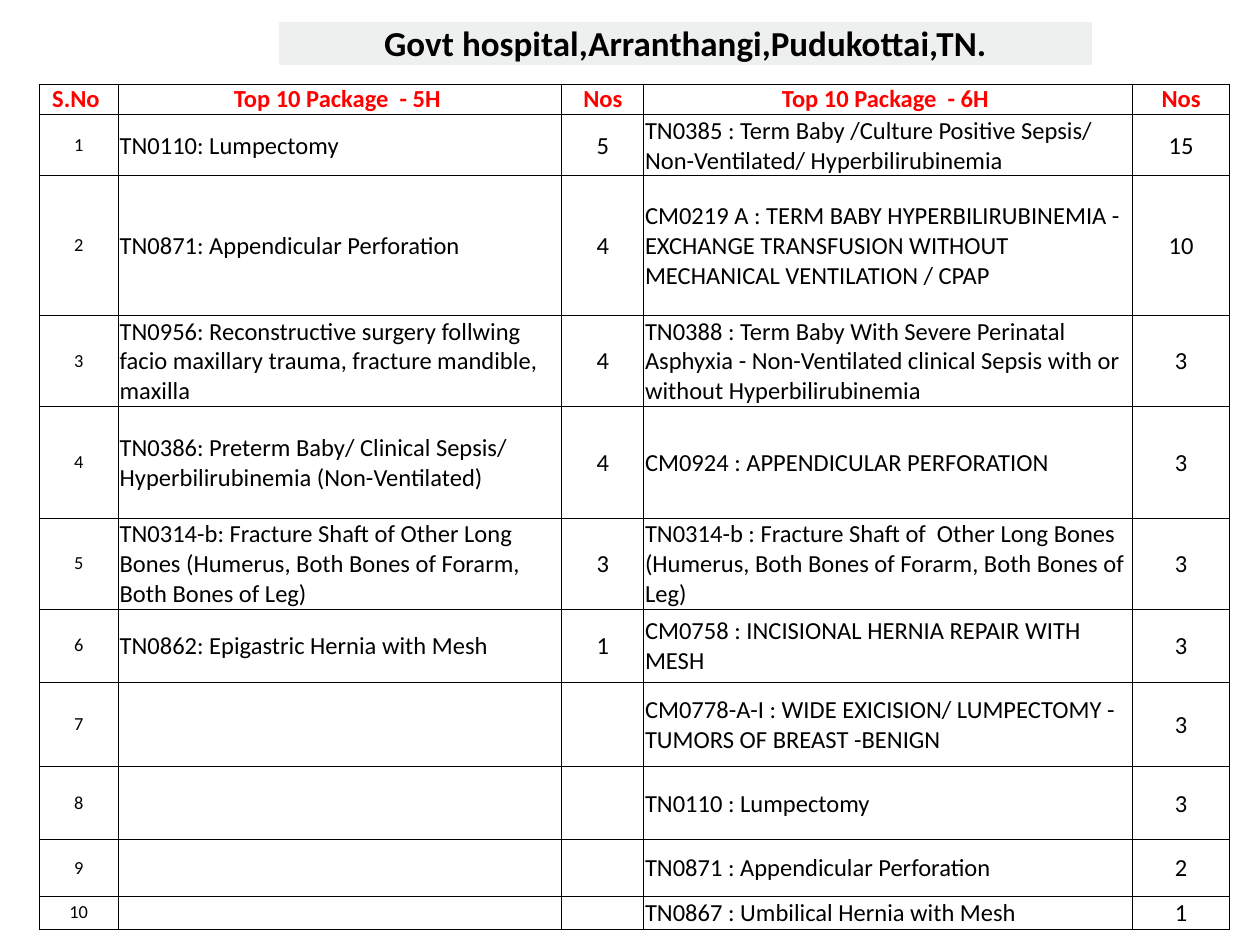
from dataclasses import dataclass

from lxml.etree import SubElement
from pptx import Presentation
from pptx.dml.color import RGBColor
from pptx.enum.text import MSO_ANCHOR, PP_ALIGN
from pptx.oxml.ns import qn
from pptx.util import Inches, Pt


@dataclass(frozen=True)
class Theme:
    font: str = "Calibri"
    ink: str = "000000"
    heading: str = "FF0000"
    paper: str = "FFFFFF"
    title_fill: str = "EEF0EF"
    title_size: float = 20
    body_size: float = 14
    serial_size: float = 10.5


THEME = Theme()

COLUMN_WIDTHS = [0.63, 3.52, 0.65, 3.88, 0.77]
ROW_HEIGHTS = [0.24, 0.47, 1.11, 0.7, 0.89, 0.7, 0.58, 0.67, 0.58, 0.45, 0.26]
HEADINGS = ["S.No ", "Top 10 Package  - 5H ", "Nos", "Top 10 Package  - 6H ", "Nos"]
PACKAGES_5H = [
    ("TN0110: Lumpectomy", 5),
    ("TN0871: Appendicular Perforation", 4),
    ("TN0956: Reconstructive surgery follwing facio maxillary trauma, "
     "fracture mandible, maxilla", 4),
    ("TN0386: Preterm Baby/ Clinical Sepsis/ Hyperbilirubinemia (Non-Ventilated)", 4),
    ("TN0314-b: Fracture Shaft of Other Long Bones "
     "(Humerus, Both Bones of Forarm, Both Bones of Leg)", 3),
    ("TN0862: Epigastric Hernia with Mesh", 1),
]
PACKAGES_6H = [
    ("TN0385 : Term Baby /Culture Positive Sepsis/ "
     "Non-Ventilated/ Hyperbilirubinemia", 15),
    ("CM0219 A : TERM BABY HYPERBILIRUBINEMIA - EXCHANGE TRANSFUSION "
     "WITHOUT MECHANICAL VENTILATION / CPAP", 10),
    ("TN0388 : Term Baby With Severe Perinatal Asphyxia - Non-Ventilated "
     "clinical Sepsis with or without Hyperbilirubinemia", 3),
    ("CM0924 : APPENDICULAR PERFORATION", 3),
    ("TN0314-b : Fracture Shaft of  Other Long Bones "
     "(Humerus, Both Bones of Forarm, Both Bones of Leg)", 3),
    ("CM0758 : INCISIONAL HERNIA REPAIR WITH MESH", 3),
    ("CM0778-A-I : WIDE EXICISION/ LUMPECTOMY - TUMORS OF BREAST -BENIGN", 3),
    ("TN0110 : Lumpectomy", 3),
    ("TN0871 : Appendicular Perforation", 2),
    ("TN0867 : Umbilical Hernia with Mesh", 1),
]


def write_text(cell, text, size=THEME.body_size, color=THEME.ink, bold=False,
               align=PP_ALIGN.CENTER, anchor=MSO_ANCHOR.MIDDLE, inset=0.01):
    cell.margin_left = cell.margin_right = cell.margin_top = Inches(inset)
    cell.margin_bottom = 0
    cell.vertical_anchor = anchor
    paragraph = cell.text_frame.paragraphs[0]
    paragraph.alignment = align
    if not text:
        # An empty cell needs its own type size, or its row grows.
        SubElement(paragraph._p, qn("a:endParaRPr"), sz=str(int(size * 100)))
        return
    run = paragraph.add_run()
    run.text = text
    run.font.name = THEME.font
    run.font.size = Pt(size)
    run.font.bold = bold
    run.font.color.rgb = RGBColor.from_string(color)


def paint_cell(cell, fill, border_color, border_width):
    properties = cell._tc.get_or_add_tcPr()
    for side in ("a:lnL", "a:lnR", "a:lnT", "a:lnB"):
        line = SubElement(properties, qn(side), w=str(Pt(border_width)))
        SubElement(SubElement(line, qn("a:solidFill")), qn("a:srgbClr"), val=border_color)
    cell.fill.solid()
    cell.fill.fore_color.rgb = RGBColor.from_string(fill)


def add_grid(slide, left, top, widths, heights, fill, border_color, border_width):
    """Add a plain table with the given column widths and row heights."""
    table = slide.shapes.add_table(
        len(heights), len(widths), Inches(left), Inches(top),
        Inches(sum(widths)), Inches(sum(heights))).table
    table.first_row = table.horz_banding = False
    for column, width in zip(table.columns, widths):
        column.width = Inches(width)
    for row, height in zip(table.rows, heights):
        row.height = Inches(height)
    for cell in table.iter_cells():
        paint_cell(cell, fill, border_color, border_width)
    return table


def add_title(slide):
    banner = add_grid(slide, 2.21, 0.17, [6.46], [0.34], THEME.title_fill, THEME.paper, 1)
    write_text(banner.cell(0, 0), "Govt hospital,Arranthangi,Pudukottai,TN.",
               size=THEME.title_size, bold=True, anchor=MSO_ANCHOR.BOTTOM)


def add_packages(slide):
    table = add_grid(slide, 0.31, 0.67, COLUMN_WIDTHS, ROW_HEIGHTS,
                     THEME.paper, THEME.ink, 0.5)
    for column, heading in enumerate(HEADINGS):
        write_text(table.cell(0, column), heading, color=THEME.heading, bold=True, inset=0)
    for serial in range(1, len(ROW_HEIGHTS)):
        write_text(table.cell(serial, 0), str(serial), size=THEME.serial_size, inset=0)
    for first_column, packages in ((1, PACKAGES_5H), (3, PACKAGES_6H)):
        blanks = [("", "")] * (len(ROW_HEIGHTS) - 1 - len(packages))
        for row, (package, count) in enumerate(packages + blanks, start=1):
            write_text(table.cell(row, first_column), package, align=PP_ALIGN.LEFT)
            write_text(table.cell(row, first_column + 1), str(count))


def main():
    presentation = Presentation()
    presentation.slide_width = Inches(10)
    presentation.slide_height = Inches(7.5)
    slide = presentation.slides.add_slide(presentation.slide_layouts[6])
    add_title(slide)
    add_packages(slide)
    presentation.save("out.pptx")


if __name__ == "__main__":
    main()
